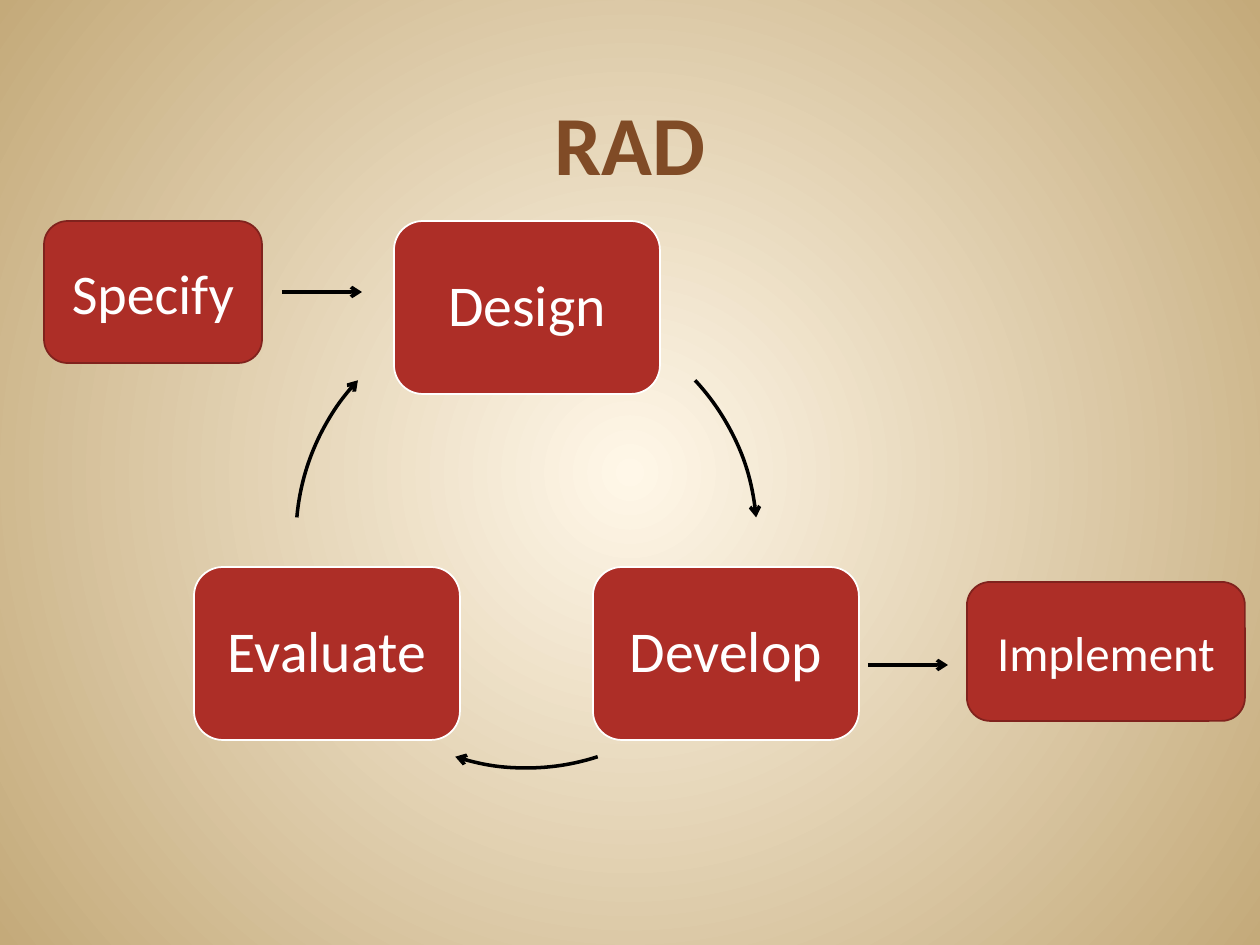
import pptx
import pptx.dml.color
import pptx.enum.shapes
import pptx.enum.text
import pptx.util
from lxml import etree
from pptx.oxml.ns import qn

PX = 914400 / 126
SHAPES = pptx.enum.shapes.MSO_SHAPE
ANCHORS = pptx.enum.text.MSO_ANCHOR
RED, DARK_RED, WHITE, BLACK, BROWN = "AD2E27", "80221D", "FFFFFF", "000000", "804B26"


def px(*lengths):
    return [pptx.util.Emu(round(length * PX)) for length in lengths]


def color(hex_code):
    return pptx.dml.color.RGBColor.from_string(hex_code)


def set_text(frame, text, size, hex_code=WHITE, bold=False,
             anchor=ANCHORS.MIDDLE, spacing=None):
    frame.word_wrap = True
    frame.vertical_anchor = anchor
    paragraph = frame.paragraphs[0]
    paragraph.alignment = pptx.enum.text.PP_ALIGN.CENTER
    paragraph.line_spacing = spacing
    run = paragraph.add_run()
    run.text = text
    run.font.name = "Calibri"
    run.font.size = pptx.util.Pt(size)
    run.font.bold = bold
    run.font.color.rgb = color(hex_code)


def set_line(shape, hex_code, width):
    shape.line.color.rgb = color(hex_code)
    shape.line.width = pptx.util.Pt(width)


def set_arrow(shape):
    set_line(shape, BLACK, 2)
    etree.SubElement(shape.get_or_add_ln(), qn("a:tailEnd"), type="arrow")


def set_background(slide, center, edge):
    fill = slide.background.fill
    fill.gradient()
    for stop, hex_code in zip(fill.gradient_stops, (center, edge)):
        stop.color.rgb = color(hex_code)
    # Turn the linear gradient into a circular one around the middle
    linear = next(slide.element.iter(qn("a:lin")))
    circle = etree.Element(qn("a:path"), path="circle")
    etree.SubElement(circle, qn("a:fillToRect"),
                     l="50000", t="50000", r="50000", b="50000")
    linear.getparent().replace(linear, circle)


def add_title(slide, text):
    title = slide.shapes.title
    title.left, title.top, title.width, title.height = px(63, 42, 1134, 157)
    set_text(title.text_frame, text, 48, BROWN, bold=True, anchor=ANCHORS.BOTTOM)


def add_step(slide, text, left, top, width, height, size, outline, spacing=None):
    step = slide.shapes.add_shape(SHAPES.ROUNDED_RECTANGLE,
                                  *px(left, top, width, height))
    step.shadow.inherit = False
    step.fill.solid()
    step.fill.fore_color.rgb = color(RED)
    set_line(step, outline, 1)
    set_text(step.text_frame, text, size, spacing=spacing)


def add_cycle_arrow(slide, start, end):
    arc = slide.shapes.add_shape(SHAPES.ARC, *px(296, 307, 461, 461))
    arc.shadow.inherit = False
    arc.fill.background()
    # Angles are stored in 60000ths of a degree, adjustments in 100000ths
    arc.adjustments[0] = start * 0.6
    arc.adjustments[1] = end * 0.6
    set_arrow(arc)


def add_straight_arrow(slide, left, right, y):
    arrow = slide.shapes.add_connector(pptx.enum.shapes.MSO_CONNECTOR.STRAIGHT,
                                       *px(left, y, right, y))
    etree.SubElement(arrow.element.spPr, qn("a:effectLst"))
    set_arrow(arrow)


def main():
    deck = pptx.Presentation()
    deck.slide_width, deck.slide_height = px(1260, 945)
    slide = deck.slides.add_slide(deck.slide_layouts[5])
    set_background(slide, "FFF7E8", "C4AA7A")
    add_title(slide, "RAD")

    # Repeating cycle
    for text, left, top in (("Design", 394, 221), ("Develop", 593, 567),
                            ("Evaluate", 194, 567)):
        add_step(slide, text, left, top, 266, 173, 33, WHITE, spacing=0.9)
    for start, end in ((317, 355), (72, 108), (185, 223)):
        add_cycle_arrow(slide, start, end)

    # Entry and exit
    add_step(slide, "Specify", 44, 221, 218, 142, 32, DARK_RED)
    add_step(slide, "Implement", 967, 582, 278, 139, 28, DARK_RED)
    add_straight_arrow(slide, 282, 362, 292)
    add_straight_arrow(slide, 868, 948, 665)

    deck.save("out.pptx")


if __name__ == "__main__":
    main()
